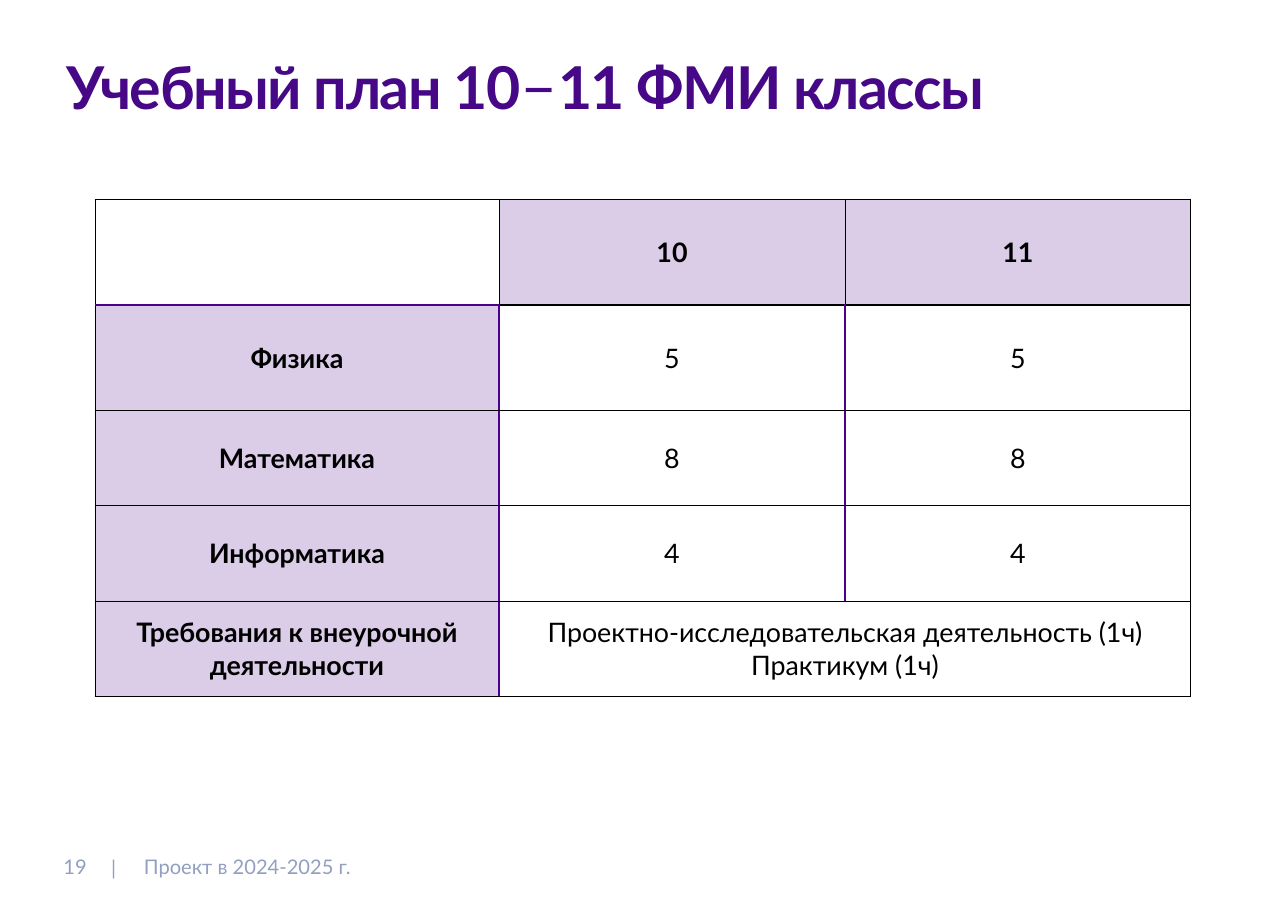
from dataclasses import dataclass

from lxml import etree
from pptx import Presentation
from pptx import util as u
from pptx.dml.color import RGBColor
from pptx.enum import text
from pptx.oxml.ns import qn


@dataclass(frozen=True)
class Theme:
    font: str = "Lato"
    title: str = "460886"
    accent: str = "4D008C"
    ink: str = "000000"
    muted: str = "939FC1"
    title_size: int = 88
    dash_size: int = 96
    cell_size: int = 40
    footer_size: int = 30
    tint: int = 20
    thin: int = 1
    thick: int = 3
    inset: float = 0.06


CENTER = text.PP_ALIGN.CENTER
LEFT = text.PP_ALIGN.LEFT
MIDDLE = text.MSO_ANCHOR.MIDDLE


class Deck:
    def __init__(self, theme, width, height):
        self.theme = theme
        self.prs = Presentation()
        self.prs.slide_width = u.Inches(width)
        self.prs.slide_height = u.Inches(height)
        self.s = self.prs.slides.add_slide(self.prs.slide_layouts[5])

    def x(self, percent):
        return round(self.prs.slide_width * percent / 100)

    def y(self, percent):
        return round(self.prs.slide_height * percent / 100)

    def box(self, left, top, width, height):
        return self.x(left), self.y(top), self.x(width), self.y(height)

    def inset(self, target):
        for side in ("left", "top", "right", "bottom"):
            setattr(target, f"margin_{side}", u.Inches(self.theme.inset))

    def style(self, r, size, color, bold=False):
        r.font.name = self.theme.font
        r.font.size = u.Pt(size)
        r.font.bold = bold
        r.font.color.rgb = RGBColor.from_string(color)

    def style_frame(self, tf, align, size, color, bold=False):
        for p in tf.paragraphs:
            p.alignment = align
            for r in p.runs:
                self.style(r, size, color, bold)

    def title(self, parts, area, tracking):
        sp = self.s.shapes.title
        sp.left, sp.top, sp.width, sp.height = self.box(*area)
        tf = sp.text_frame
        self.inset(tf)
        tf.auto_size = text.MSO_AUTO_SIZE.NONE
        tf.vertical_anchor = text.MSO_ANCHOR.TOP
        p = tf.paragraphs[0]
        p.alignment = LEFT
        p.line_spacing = 0.8
        for content, size, bold in parts:
            r = p.add_run()
            r.text = content
            self.style(r, size, self.theme.title, bold)
            r.font._element.set("spc", str(round(tracking * 100)))

    def footer(self, content, area, align=CENTER, anchor=MIDDLE, wrap=False):
        tf = self.s.shapes.add_textbox(*self.box(*area)).text_frame
        self.inset(tf)
        tf.auto_size = text.MSO_AUTO_SIZE.SHAPE_TO_FIT_TEXT
        tf.word_wrap = wrap
        tf.vertical_anchor = anchor
        tf.text = content
        self.style_frame(tf, align, self.theme.footer_size, self.theme.muted)

    def border(self, cell, side, color, width):
        ln = etree.SubElement(cell._tc.get_or_add_tcPr(), qn(f"a:ln{side}"),
                              w=str(u.Pt(width)))
        fill = etree.SubElement(ln, qn("a:solidFill"))
        etree.SubElement(fill, qn("a:srgbClr"), val=color)

    def borders(self, cell, row, col, last):
        t = self.theme
        thin, heavy, purple = (t.ink, t.thin), (t.ink, t.thick), (t.accent, t.thick)
        header_line = heavy if col else purple
        inner = [thin] + [purple if row and (col < 2 or not last) else thin] * 2
        edges = {
            "L": inner[1] if col else thin,
            "R": purple if row and col < (1 if last else 2) else thin,
            "T": header_line if row == 1 else thin,
            "B": header_line if row == 0 else thin,
        }
        for side, line in edges.items():
            self.border(cell, side, *line)

    def cell(self, cell, content, row, col, last):
        t = self.theme
        heading = (row == 0) != (col == 0)
        self.inset(cell)
        cell.vertical_anchor = MIDDLE
        self.borders(cell, row, col, last)
        if heading:
            cell.fill.solid()
            cell.fill.fore_color.rgb = RGBColor.from_string(t.accent)
            color = cell._tc.tcPr.find(qn("a:solidFill")).find(qn("a:srgbClr"))
            etree.SubElement(color, qn("a:alpha"), val=str(t.tint * 1000))
        else:
            cell.fill.background()
        if content:
            cell.text_frame.text = content
            self.style_frame(cell.text_frame, CENTER, t.cell_size, t.ink, heading)

    def table(self, rows, left, top, widths, heights):
        area = self.box(left, top, sum(widths), sum(heights))
        table = self.s.shapes.add_table(len(rows), len(widths), *area).table
        table.first_row = table.horz_banding = False
        for column, width in zip(table.columns, widths):
            column.width = self.x(width)
        for line, height in zip(table.rows, heights):
            line.height = self.y(height)
        for i, values in enumerate(rows):
            for j, content in enumerate(values):
                self.cell(table.cell(i, j), content, i, j, i == len(rows) - 1)
        return table


def main():
    theme = Theme()
    deck = Deck(theme, 26.67, 18.86)
    deck.title([("Учебный план 10", theme.title_size, True),
                ("–", theme.dash_size, False),
                ("11 ФМИ классы", theme.title_size, True)],
               (4.95, 6.26, 90.1, 10.18), -2.1)
    hours = [
        ("", "10", "11"),
        ("Физика", "5", "5"),
        ("Математика", "8", "8"),
        ("Информатика", "4", "4"),
        ("Требования к внеурочной деятельности",
         "Проектно-исследовательская деятельность (1ч)\nПрактикум (1ч)", ""),
    ]
    table = deck.table(hours, 7.37, 21.85, [31.38] + [26.85] * 2,
                       [11.61] * 2 + [10.45] * 3)
    table.cell(4, 1).merge(table.cell(4, 2))
    deck.footer("19", (4.51, 93.48, 2.64, 3.29), anchor=text.MSO_ANCHOR.BOTTOM)
    deck.footer("|", (8.32, 93.53, 1.01, 3.29))
    deck.footer("Проект в 2024-2025 г.", (10.95, 93.53, 71.35, 3.23),
                align=LEFT, wrap=True)
    deck.prs.save("out.pptx")


if __name__ == "__main__":
    main()
